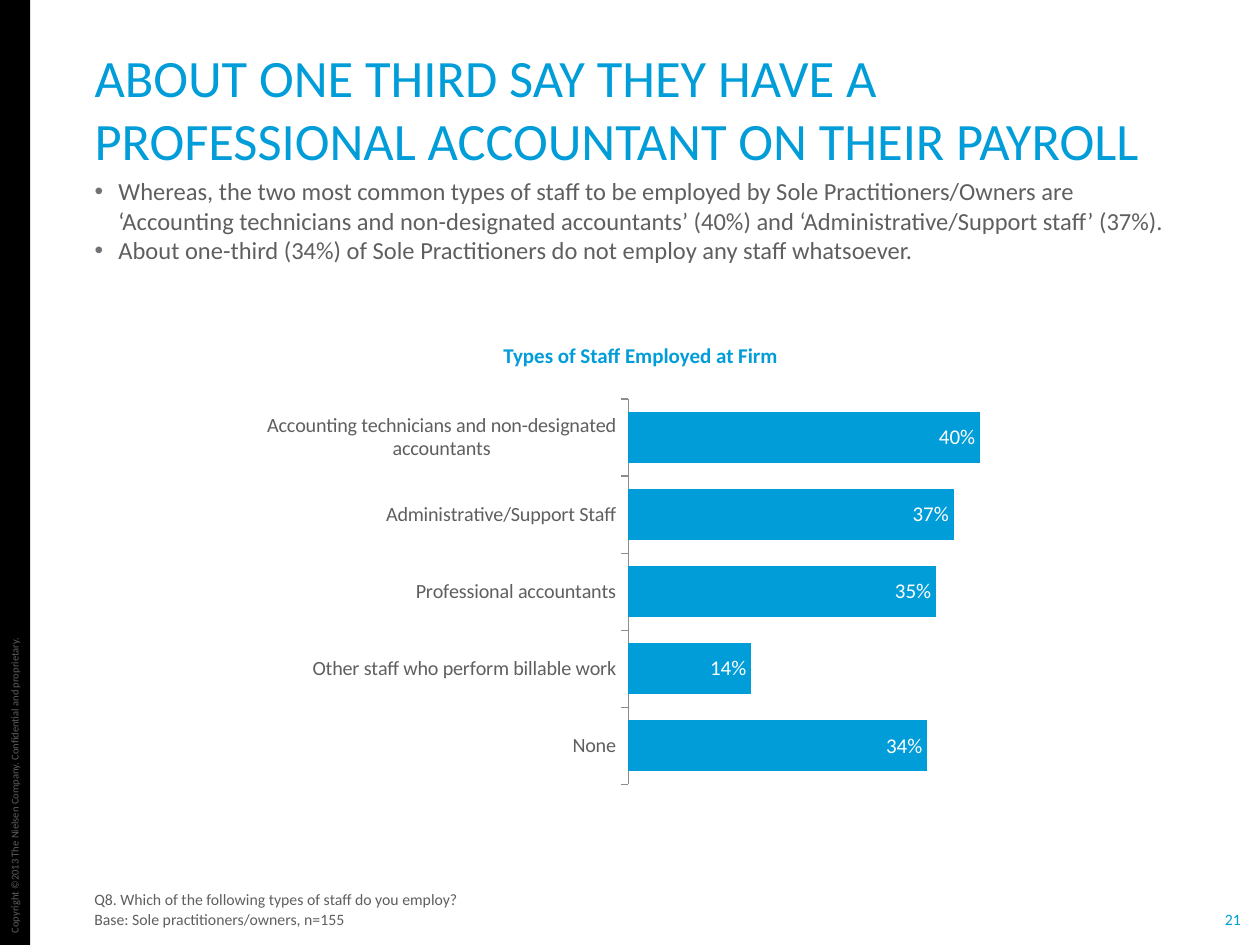
import pptx
import pptx.chart.data
import pptx.dml.color
import pptx.enum.chart
import pptx.enum.shapes
import pptx.enum.text
import pptx.oxml
import pptx.oxml.ns
import pptx.util
from pptx.util import Inches

BLUE, GREY, BULLET_GREY, AXIS_GREY = "009DD9", "5F5F5F", "707276", "8C8C8C"
WHITE, BLACK = "FFFFFF", "000000"
ALIGN = pptx.enum.text.PP_ALIGN
ANCHOR = pptx.enum.text.MSO_ANCHOR
PERCENT = "#,##0%"


def rgb(value):
    return pptx.dml.color.RGBColor.from_string(value)


def xml(text):
    """Parse one element, declaring the a: and c: prefixes."""
    return pptx.oxml.parse_xml(text.replace("/>", f' {pptx.oxml.ns.nsdecls("a", "c")}/>', 1)
                               if text.endswith("/>") and text.count("<") == 1
                               else text.replace(">", f' {pptx.oxml.ns.nsdecls("a", "c")}>', 1))


class Deck:
    font = "Calibri"

    def __init__(self, prs):
        self.slide = prs.slides.add_slide(prs.slide_layouts[1])

    def style(self, font, size, color, bold=False):
        font.name, font.size, font.bold = self.font, pptx.util.Pt(size), bold
        font.color.rgb = rgb(color)

    def place(self, sp, box):
        sp.left, sp.top, sp.width, sp.height = (Inches(v) for v in box)

    def fill_text(self, sp, lines, size, color, align=ALIGN.LEFT, anchor=ANCHOR.TOP,
                  bold=False, bullets=False, inset=0.1, wrap=True, before=0):
        tf = sp.text_frame
        tf.text = "\n".join(lines)
        tf.auto_size = pptx.enum.text.MSO_AUTO_SIZE.NONE
        tf.word_wrap, tf.vertical_anchor = wrap, anchor
        tf.margin_left = tf.margin_right = Inches(inset)
        tf.margin_top = tf.margin_bottom = 0
        for i, p in enumerate(tf.paragraphs):
            p.alignment = align
            p.space_before = pptx.util.Pt(before if i else 0)
            if bullets:
                self.bullet(p)
            for r in p.runs:
                self.style(r.font, size, color, bold)

    def bullet(self, p):
        pPr = p._p.get_or_add_pPr()
        pPr.set("marL", str(Inches(0.19)))
        pPr.set("indent", str(Inches(-0.19)))
        pPr.append(xml(f'<a:buClr><a:srgbClr val="{BULLET_GREY}"/></a:buClr>'))
        pPr.append(xml('<a:buFont typeface="Arial"/>'))
        pPr.append(xml('<a:buChar char="•"/>'))

    def placeholder(self, index, box, lines, size, color, **options):
        sp = self.slide.placeholders[index]
        self.place(sp, box)
        self.fill_text(sp, lines, size, color, **options)

    def text(self, box, lines, size, color, rotation=0, **options):
        sp = self.slide.shapes.add_textbox(*(Inches(v) for v in box))
        sp.rotation = rotation
        self.fill_text(sp, lines, size, color, **options)

    def bar(self, box, color):
        sp = self.slide.shapes.add_shape(
            pptx.enum.shapes.MSO_SHAPE.RECTANGLE, *(Inches(v) for v in box))
        sp.shadow.inherit = False
        sp.fill.solid()
        sp.fill.fore_color.rgb = rgb(color)
        sp.line.fill.background()

    def bar_chart(self, box, values, plot_area):
        data = pptx.chart.data.CategoryChartData(number_format=PERCENT)
        data.categories = list(values)
        data.add_series("Series 1", list(values.values()))
        kinds = pptx.enum.chart
        chart = self.slide.shapes.add_chart(
            kinds.XL_CHART_TYPE.BAR_CLUSTERED, *(Inches(v) for v in box), data).chart
        chart.has_title = chart.has_legend = False
        self.style(chart.font, 18, GREY)

        axis = chart.category_axis
        axis.reverse_order = True
        axis.has_major_gridlines = False
        axis.major_tick_mark = kinds.XL_TICK_MARK.OUTSIDE
        axis.minor_tick_mark = kinds.XL_TICK_MARK.NONE
        axis.format.line.color.rgb = rgb(AXIS_GREY)
        axis.format.line.width = pptx.util.Pt(0.75)
        self.style(axis.tick_labels.font, 11.5, GREY)

        scale = chart.value_axis
        scale.minimum_scale, scale.maximum_scale = 0, 0.45
        scale.has_major_gridlines = scale.visible = False

        plot = chart.plots[0]
        plot.gap_width, plot.vary_by_categories = 52, False
        fill = plot.series[0].format.fill
        fill.solid()
        fill.fore_color.rgb = rgb(BLUE)
        labels = plot.series[0].data_labels
        labels.show_value = True
        labels.number_format, labels.number_format_is_linked = PERCENT, False
        labels.position = kinds.XL_LABEL_POSITION.INSIDE_END
        self.style(labels.font, 12, WHITE)
        self.inner_layout(chart, plot_area)

    def inner_layout(self, chart, plot_area):
        """Fix the plot area, given as fractions of the chart: x, y, w, h."""
        area = chart._chartSpace.chart.plotArea
        for old in area.findall(pptx.oxml.ns.qn("c:layout")):
            area.remove(old)
        modes = '<c:xMode val="edge"/><c:yMode val="edge"/>'
        sizes = "".join(f'<c:{k} val="{v}"/>' for k, v in zip("xywh", plot_area))
        area.insert(0, xml('<c:layout><c:manualLayout><c:layoutTarget val="inner"/>'
                           f'{modes}{sizes}</c:manualLayout></c:layout>'))


def main():
    prs = pptx.Presentation()
    prs.slide_width, prs.slide_height = Inches(10), Inches(7.5)
    deck = Deck(prs)

    deck.bar((0, 0, 0.24, 7.5), BLACK)
    deck.text((-1.18, 6.11, 2.59, 0.2),
              ["Copyright ©2013 The Nielsen Company. Confidential and proprietary."],
              6, GREY, rotation=270, anchor=ANCHOR.MIDDLE, wrap=False)
    deck.text((9.71, 7.22, 0.15, 0.15), ["21"], 9, BLUE, align=ALIGN.CENTER,
              anchor=ANCHOR.MIDDLE, inset=0, wrap=False)

    deck.placeholder(0, (0.65, 0.74, 8.93, 0.62),
                     ["ABOUT ONE THIRD SAY THEY HAVE A PROFESSIONAL ACCOUNTANT ON THEIR PAYROLL"],
                     30, BLUE, anchor=ANCHOR.BOTTOM)
    deck.placeholder(1, (0.65, 1.4, 8.92, 0.85), [
        "Whereas, the two most common types of staff to be employed by Sole "
        "Practitioners/Owners are ‘Accounting technicians and non-designated "
        "accountants’ (40%) and ‘Administrative/Support staff’ (37%).",
        "About one-third (34%) of Sole Practitioners do not employ any staff whatsoever.",
    ], 14, GREY, bullets=True)

    deck.text((2.75, 2.72, 4.67, 0.28), ["Types of Staff Employed at Firm"],
              12, BLUE, align=ALIGN.CENTER, bold=True)
    deck.bar_chart((1.88, 3.08, 6.25, 3.25), {
        "Accounting technicians and non-designated accountants": 0.40,
        "Administrative/Support Staff": 0.37,
        "Professional accountants": 0.35,
        "Other staff who perform billable work": 0.14,
        "None": 0.34,
    }, plot_area=(0.497, 0.027, 0.503, 0.941))
    deck.text((0.65, 6.97, 9.35, 0.4), [
        "Q8. Which of the following types of staff do you employ?",
        "Base: Sole practitioners/owners, n=155",
    ], 9, GREY, anchor=ANCHOR.BOTTOM, before=0.6)

    prs.save("out.pptx")


if __name__ == "__main__":
    main()
